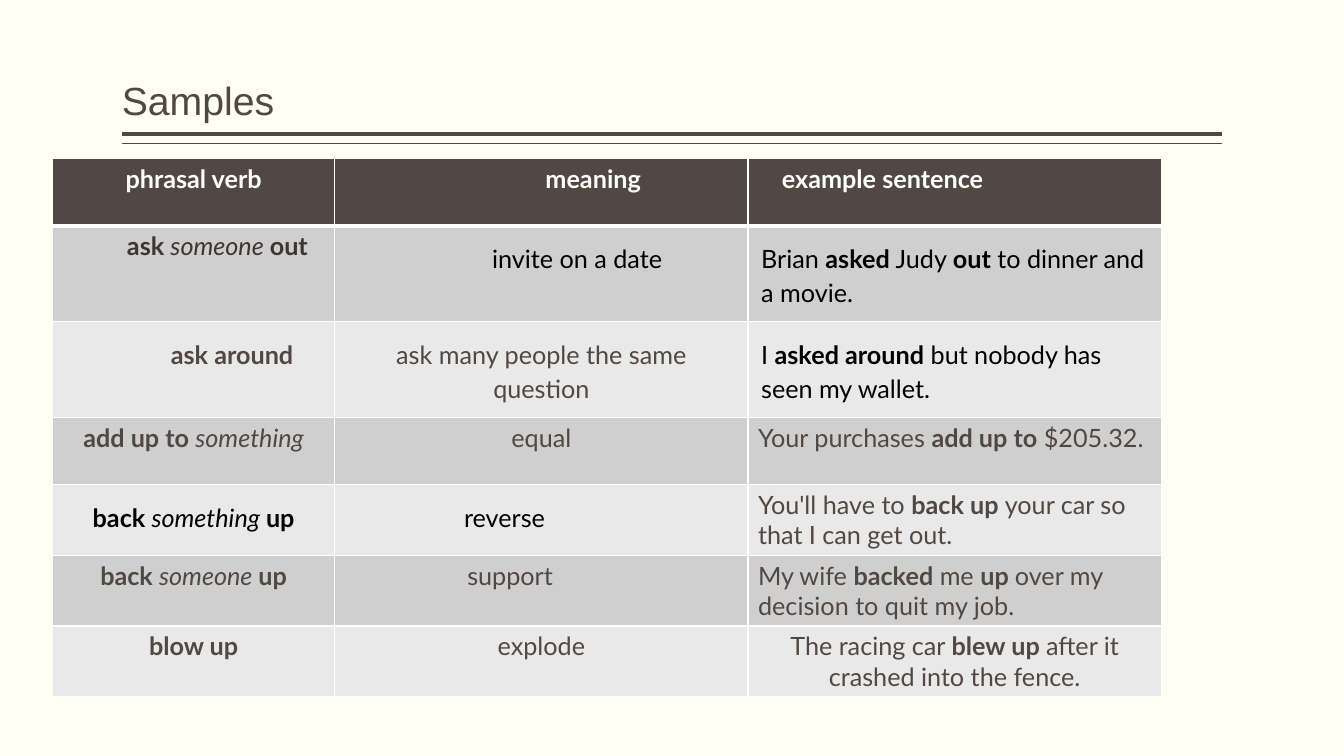
from dataclasses import dataclass

from lxml import etree
from pptx import Presentation
from pptx.dml.color import RGBColor
from pptx.enum import shapes, text
from pptx.oxml import ns
from pptx.util import Pt

BROWN, DARK_BROWN, BLACK, WHITE = "514843", "3D3632", "000000", "FFFFFF"
CREAM, BANDS = "FFFFF3", ("E9E9E9", "D0CFCF")
LEFT, CENTER = text.PP_ALIGN.LEFT, text.PP_ALIGN.CENTER
COLUMN_WIDTHS = (201.6, 295.2, 295.2)
ROW_HEIGHT = 48.2


@dataclass
class Entry:
    """Cell content: runs are split by |, * starts a bold run, _ an italic one."""
    runs: str
    align: int = CENTER
    color: str = BROWN
    indent: float = 0
    padded: bool = False


ROWS = [
    [Entry("*phrasal verb", color=WHITE),
     Entry("*meaning", color=WHITE, indent=74),
     Entry("*example sentence", LEFT, WHITE, indent=17)],
    [Entry("*ask |_someone |*out", color=DARK_BROWN, indent=34),
     Entry("invite on a date", color=BLACK, indent=51, padded=True),
     Entry("Brian |*asked| Judy |*out| to dinner and a movie.", LEFT, BLACK, padded=True)],
    [Entry("*ask around", indent=55, padded=True),
     Entry("ask many people the same question", padded=True),
     Entry("I |*asked around| but nobody has seen my wallet.", LEFT, BLACK, padded=True)],
    [Entry("*add up to |_something"),
     Entry("equal"),
     Entry("Your purchases |*add up to| $205.32.", LEFT)],
    [Entry("*back |_something |*up", color=BLACK, padded=True),
     Entry("reverse", LEFT, BLACK, indent=83, padded=True),
     Entry("You'll have to |*back up |your car so that I can get out.", LEFT)],
    [Entry("*back |_someone |*up"),
     Entry("support", LEFT, indent=87.5),
     Entry("My wife |*backed| me |*up |over my decision to quit my job.", LEFT)],
    [Entry("*blow up"),
     Entry("explode"),
     Entry("The racing car |*blew up |after it crashed into the fence.")],
]


def rgb(value):
    return RGBColor.from_string(value)


def add_title(slide, words):
    sp = slide.shapes.title
    sp.left, sp.top, sp.width, sp.height = Pt(87), Pt(6), Pt(786), Pt(86)
    tf = sp.text_frame
    tf.text = words
    tf.auto_size = text.MSO_AUTO_SIZE.NONE
    tf.vertical_anchor = text.MSO_ANCHOR.BOTTOM
    tf.margin_left = tf.margin_right = 0
    tf.margin_top = tf.margin_bottom = Pt(3.6)
    p = tf.paragraphs[0]
    p.alignment = LEFT
    p.line_spacing = 0.9
    p.font.name, p.font.size = "Arial", Pt(28)
    p.font.color.rgb = rgb(BROWN)


def add_rule(slide, y, weight):
    line = slide.shapes.add_connector(
        shapes.MSO_CONNECTOR.STRAIGHT, Pt(87), Pt(y), Pt(873), Pt(y))
    line.line.color.rgb = rgb(BROWN)
    line.line.width = Pt(weight)
    etree.SubElement(line._element.spPr, ns.qn("a:effectLst"))


def set_borders(cell, bottom_weight):
    tc_pr = cell._tc.get_or_add_tcPr()
    weights = {"lnL": 1, "lnR": 1, "lnT": 1, "lnB": bottom_weight}
    for side, weight in weights.items():
        ln = etree.SubElement(tc_pr, ns.qn(f"a:{side}"), w=str(Pt(weight)))
        fill = etree.SubElement(ln, ns.qn("a:solidFill"))
        etree.SubElement(fill, ns.qn("a:srgbClr"), val=WHITE)


def fill_cell(cell, entry):
    if entry.padded:
        cell.margin_left = cell.margin_right = Pt(9.4)
        cell.margin_top = cell.margin_bottom = Pt(9.4)
    p = cell.text_frame.paragraphs[0]
    p.alignment = entry.align
    p.line_spacing = 1.15 if entry.padded else 1.0
    p.font.name, p.font.size = "Lato", Pt(18)
    if entry.indent:
        p._p.get_or_add_pPr().set("marL", str(Pt(entry.indent)))
    for part in entry.runs.split("|"):
        r = p.add_run()
        r.text = part.lstrip("*_")
        r.font.bold = part.startswith("*")
        r.font.italic = part.startswith("_")
        r.font.color.rgb = rgb(entry.color)


def add_verb_table(slide):
    frame = slide.shapes.add_table(
        len(ROWS), len(COLUMN_WIDTHS), Pt(37.5), Pt(113),
        Pt(sum(COLUMN_WIDTHS)), Pt(ROW_HEIGHT * len(ROWS)))
    table = frame.table
    table.horz_banding = False
    for column, width in zip(table.columns, COLUMN_WIDTHS):
        column.width = Pt(width)
    for i, entries in enumerate(ROWS):
        for j, entry in enumerate(entries):
            cell = table.cell(i, j)
            set_borders(cell, 1 if i else 3)
            cell.fill.solid()
            cell.fill.fore_color.rgb = rgb(BANDS[i % 2] if i else BROWN)
            fill_cell(cell, entry)


def main():
    prs = Presentation()
    prs.slide_width, prs.slide_height = Pt(960), Pt(540)
    slide = prs.slides.add_slide(prs.slide_layouts[5])
    slide.background.fill.solid()
    slide.background.fill.fore_color.rgb = rgb(CREAM)
    add_rule(slide, 95.8, 3)
    add_rule(slide, 102.6, 1)
    add_title(slide, "Samples")
    add_verb_table(slide)
    prs.save("out.pptx")


if __name__ == "__main__":
    main()
